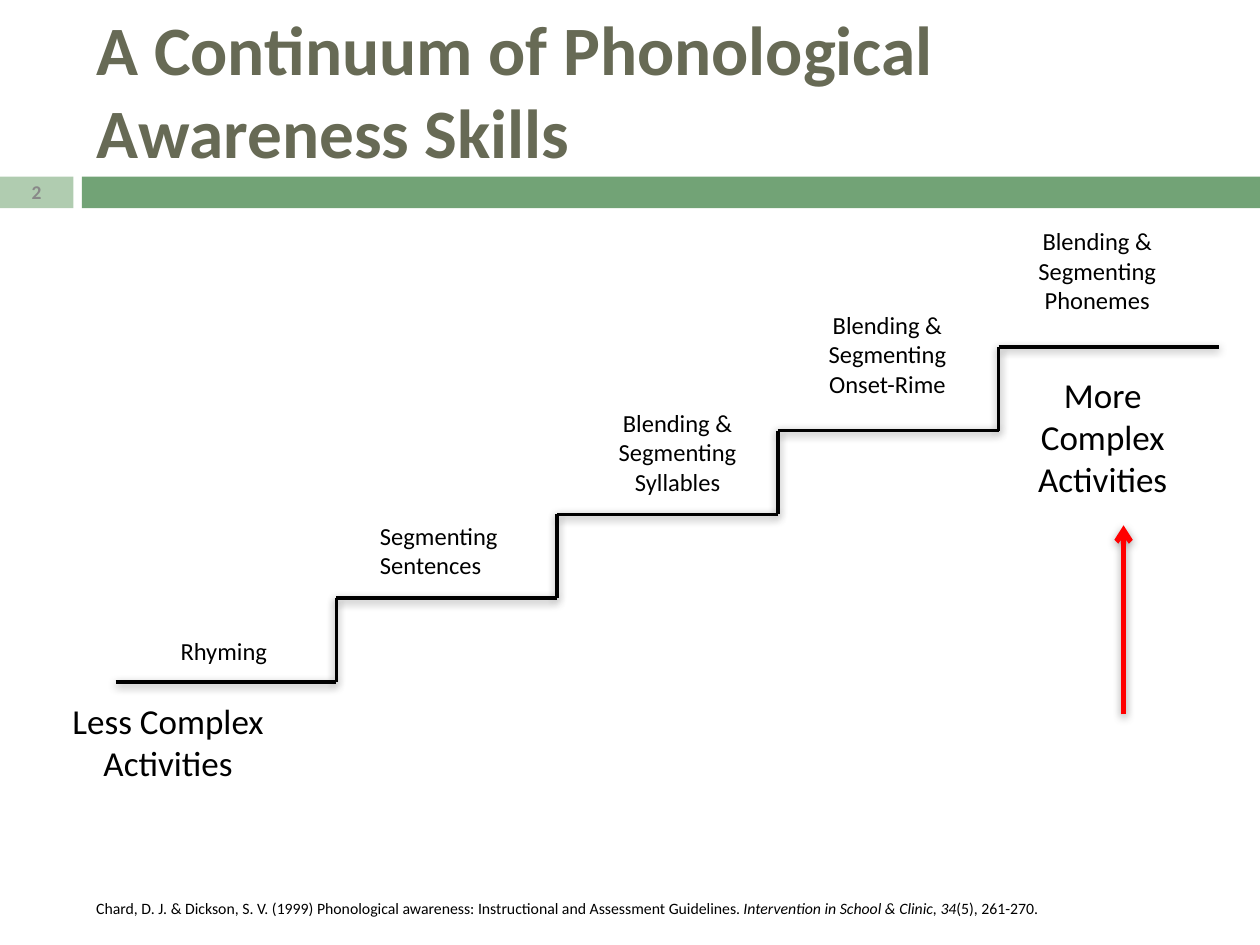
"""Build a slide of rising steps in phonological awareness."""
from lxml.etree import SubElement
from pptx import Presentation
from pptx.dml.color import RGBColor
from pptx.enum.shapes import MSO_CONNECTOR, MSO_SHAPE
from pptx.enum.text import MSO_ANCHOR, MSO_AUTO_SIZE, PP_ALIGN
from pptx.oxml import parse_xml
from pptx.oxml.ns import nsdecls, qn
from pptx.util import Cm, Pt

BLACK = RGBColor(0, 0, 0)
RED = RGBColor(0xFF, 0, 0)
GREEN = RGBColor(0x72, 0xA3, 0x76)
PALE = RGBColor(0xB0, 0xCC, 0xB0)
GRAY = RGBColor(0x89, 0x89, 0x89)
OLIVE = RGBColor(0x67, 0x6A, 0x55)
LEFT, MID = PP_ALIGN.LEFT, PP_ALIGN.CENTER
SHADE = (
    f'<a:effectLst {nsdecls("a")}>'
    '<a:outerShdw blurRad="63500" dist="20320" dir="5400000" rotWithShape="0">'
    '<a:srgbClr val="000000"><a:alpha val="38000"/></a:srgbClr>'
    '</a:outerShdw></a:effectLst>'
)


class Deck:
    def __init__(self, font):
        self.font = font
        self.file = Presentation()
        self.file.slide_width, self.file.slide_height = Cm(25.4), Cm(19.05)
        self.slide = self.file.slides.add_slide(self.file.slide_layouts[5])
        self.shapes = self.slide.shapes

    def fill_text(self, frame, runs, size, color=BLACK, align=LEFT, bold=False,
                  anchor=MSO_ANCHOR.TOP, wrap=True):
        look = {"word_wrap": wrap, "vertical_anchor": anchor,
                "auto_size": MSO_AUTO_SIZE.NONE}
        for key, value in look.items():
            setattr(frame, key, value)
        para = frame.paragraphs[0]
        para.alignment = align
        for words, slant in runs:
            run = para.add_run()
            run.text = words
            form = {"name": self.font, "size": Pt(size), "bold": bold, "italic": slant}
            for key, value in form.items():
                setattr(run.font, key, value)
            run.font.color.rgb = color

    def title(self, words, place, size, color):
        head = self.shapes.title
        for key, value in zip(("left", "top", "width", "height"), place):
            setattr(head, key, Cm(value))
        self.fill_text(head.text_frame, [(words, False)], size, color, bold=True,
                       anchor=MSO_ANCHOR.MIDDLE)

    def text(self, runs, place, size, **form):
        if isinstance(runs, str):
            runs = [(runs, False)]
        box = self.shapes.add_textbox(*map(Cm, place))
        self.fill_text(box.text_frame, runs, size, **form)

    def bar(self, place, color):
        bar = self.shapes.add_shape(MSO_SHAPE.RECTANGLE, *map(Cm, place))
        bar.shadow.inherit = False
        bar.fill.solid()
        bar.fill.fore_color.rgb = color
        bar.line.fill.background()

    def line(self, ends, width, color=BLACK, arrow=False):
        line = self.shapes.add_connector(MSO_CONNECTOR.STRAIGHT, *map(Cm, ends))
        line.line.width = Pt(width)
        line.line.color.rgb = color
        props = line._element.spPr
        if arrow:
            SubElement(props.find(qn("a:ln")), qn("a:tailEnd"), type="arrow")
        props.append(parse_xml(SHADE))

    def stairs(self, left, base, run, rise, count):
        for step in range(count):
            x, y = left + step * run, base - step * rise
            self.line((x, y, x + run, y), 2)
            if step:
                self.line((x, y, x, y + rise), 2)


def main():
    deck = Deck("Calibri")
    deck.bar((0, 3.56, 1.48, 0.64), PALE)
    deck.bar((1.65, 3.56, 23.75, 0.64), GREEN)
    deck.title("A Continuum of Phonological Awareness Skills",
               (1.69, 0.42, 22.66, 2.75), 39.6, OLIVE)
    deck.text("2", (0, 3.53, 1.48, 0.69), 11.1, color=GRAY, align=MID,
              bold=True, anchor=MSO_ANCHOR.MIDDLE)
    deck.stairs(2.33, 13.75, 4.45, 1.69, 5)

    deck.text("Rhyming", (3.39, 12.7, 2.49, 0.86), 14, wrap=False)
    deck.text("Segmenting Sentences", (7.41, 10.37, 3.18, 1.45), 14)
    tops = {"Syllables": (12.07, 8.1), "Onset-Rime": (16.3, 6.12),
            "Phonemes": (20.53, 4.44)}
    for unit, (x, y) in tops.items():
        deck.text(f"Blending & Segmenting {unit}", (x, y, 3.18, 2.06), 14, align=MID)
    for level, x, y in (("Less", 1.06, 13.97), ("More", 19.9, 7.41)):
        deck.text(f"{level} Complex Activities", (x, y, 4.66, 2.82), 20, align=MID)

    deck.line((22.65, 14.4, 22.65, 10.59), 3, RED, arrow=True)
    deck.text([
        ("Chard, D. J. & Dickson, S. V. (1999) Phonological awareness: "
         "Instructional and Assessment Guidelines. ", False),
        ("Intervention in School & Clinic, 34", True),
        ("(5), 261-270.", False),
    ], (1.69, 17.99, 23.07, 0.64), 9)
    deck.file.save("out.pptx")


if __name__ == "__main__":
    main()
